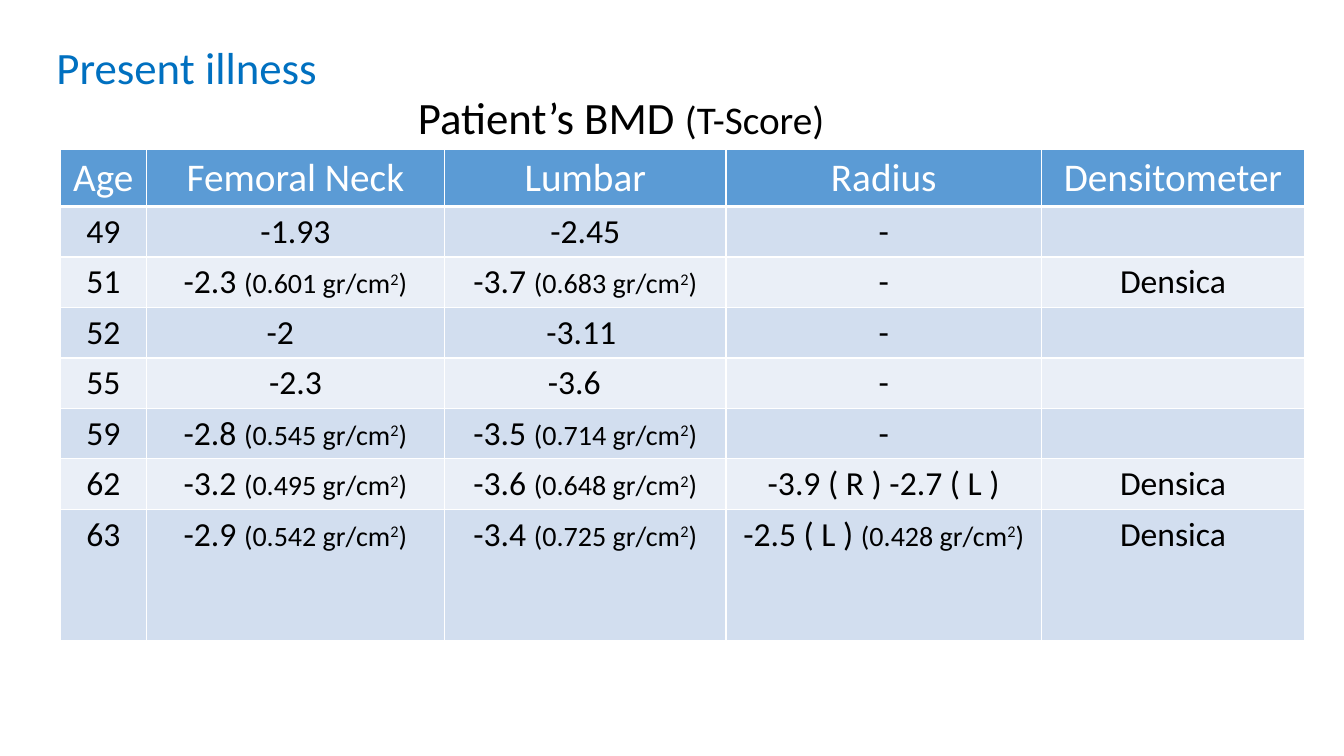
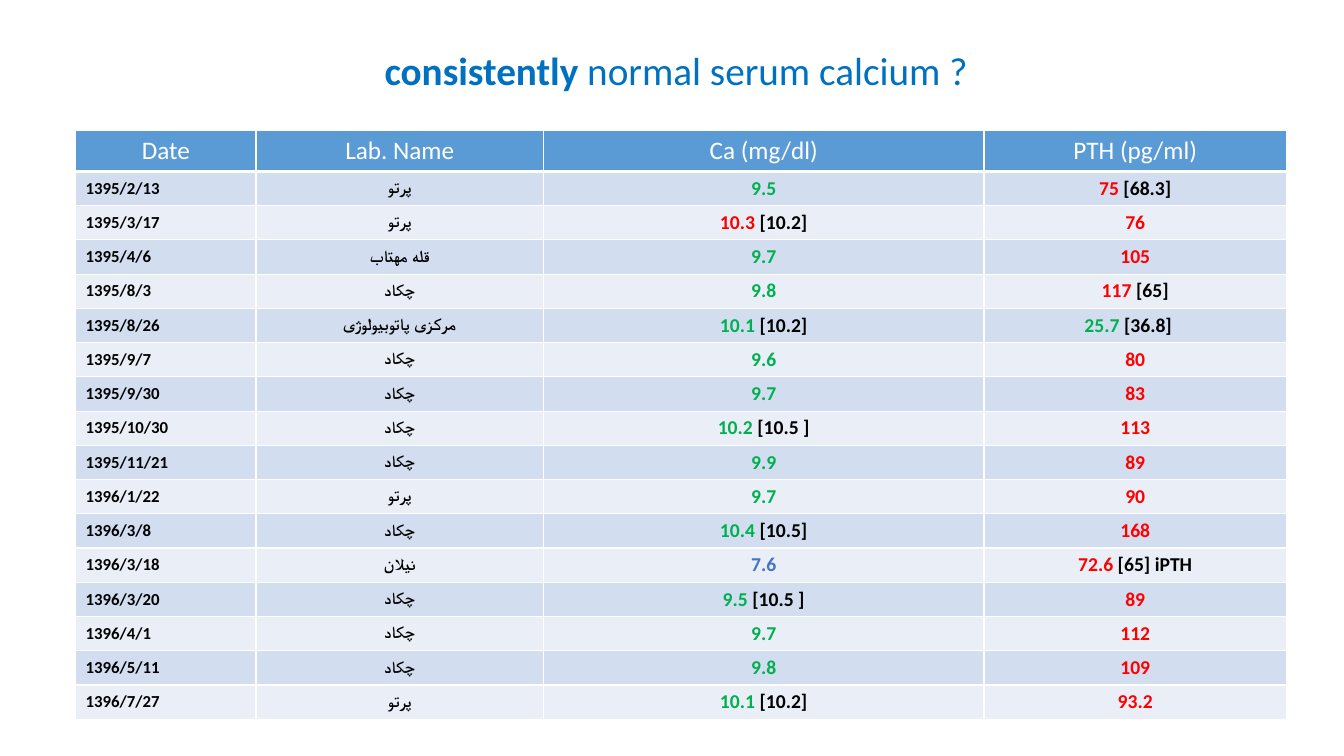
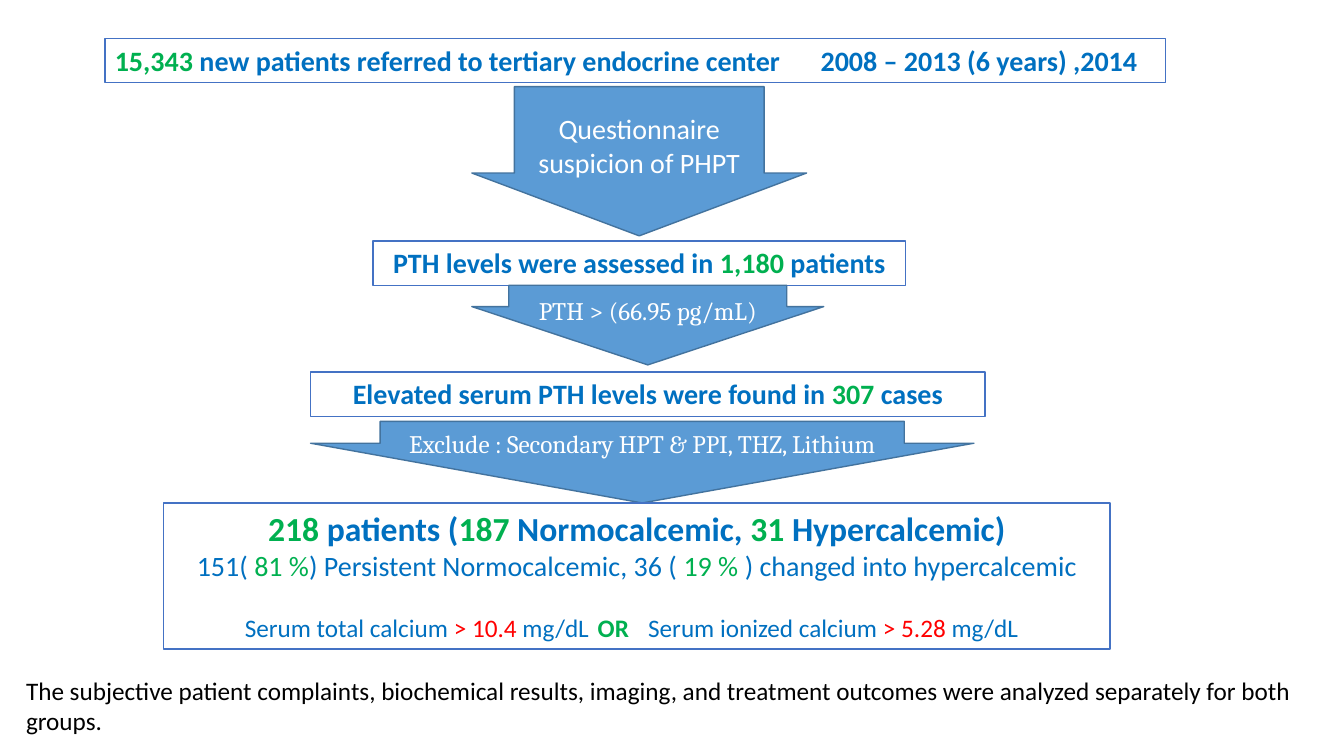
from lxml.etree import SubElement
from pptx import Presentation
from pptx.dml.color import RGBColor
from pptx.enum.shapes import MSO_SHAPE
from pptx.enum.text import MSO_ANCHOR, PP_ALIGN
from pptx.oxml.ns import qn
from pptx.util import Inches, Pt

HEX = {
    "white": "FFFFFF", "black": "000000", "title": "0070C0",
    "head": "5B9BD5", "odd": "D2DEEF", "even": "EAEFF7",
    "edge": "4472C4", "rim": "43739E",
    "green": "00B050", "red": "FF0000", "blue": "4472C4",
}
LEFT, MID = PP_ALIGN.LEFT, PP_ALIGN.CENTER
TITLE_ONLY, BLANK = 5, 6


def rgb(name):
    return RGBColor.from_string(HEX[name])


def green(text):
    return text, {"color": "green"}


def red(text):
    return text, {"color": "red"}


def bmd(score, density=None):
    """Runs for a T-score, with the bone density after it if known."""
    if density is None:
        return [score]
    small = {"size": 20}
    return [score + " ", (f"({density} gr/cm", small),
            ("2", {"size": 20, "base": 30}), (")", small)]


def lab(text):
    """Runs for a lab value: a colour letter, the value, then a black remark."""
    code = {"g": "green", "r": "red", "b": "blue"}[text[0]]
    value, gap, rest = text[1:].partition(" ")
    runs = [(value, {"size": 14, "color": code})]
    return runs + [(gap + rest, {"size": 14})] if rest else runs


def set_tabs(para, start, stops):
    """Indent a paragraph and give it left tab stops, in inches."""
    props = para._p.get_or_add_pPr()
    props.set("marL", str(Inches(start)))
    props.set("indent", "0")
    tabs = SubElement(props, qn("a:tabLst"))
    for stop in stops:
        SubElement(tabs, qn("a:tab"), pos=str(Inches(stop)), algn="l")


class Deck:
    base = {"name": "Calibri", "size": 18, "bold": False, "color": "black"}

    def __init__(self):
        self.prs = Presentation()
        self.prs.slide_width = Inches(13.33)
        self.prs.slide_height = Inches(7.5)

    def add(self, layout):
        self.slide = self.prs.slides.add_slide(self.prs.slide_layouts[layout])

    def put(self, frame, paras, align=MID, **style):
        """Set paragraphs of runs; a run is a text or (text, format)."""
        for i, runs in enumerate(paras):
            para = frame.add_paragraph() if i else frame.paragraphs[0]
            para.alignment = align
            for item in runs:
                text, extra = (item, {}) if isinstance(item, str) else item
                look = {**self.base, **style, **extra}
                run = para.add_run()
                run.text = text
                run.font.color.rgb = rgb(look.pop("color"))
                raised = look.pop("base", 0)
                if raised:
                    run._r.get_or_add_rPr().set("baseline", str(raised * 1000))
                look["size"] = Pt(look["size"])
                for key, value in look.items():
                    setattr(run.font, key, value)
        return frame

    def title(self, at, runs, align=LEFT, **style):
        shape = self.slide.shapes.title
        for key, value in zip(("left", "top", "width", "height"), at):
            setattr(shape, key, Inches(value))
        frame = shape.text_frame
        frame.word_wrap = False
        frame.vertical_anchor = MSO_ANCHOR.TOP
        self.put(frame, [runs], align, color="title", **style)

    def text(self, at, runs, align=LEFT, **style):
        frame = self.slide.shapes.add_textbox(*map(Inches, at)).text_frame
        frame.word_wrap = True
        self.put(frame, [runs], align, **style)

    def shape(self, kind, at, fill, line):
        shape = self.slide.shapes.add_shape(kind, *map(Inches, at))
        shape.shadow.inherit = False
        shape.fill.solid()
        shape.fill.fore_color.rgb = rgb(fill)
        shape.line.color.rgb = rgb(line)
        shape.line.width = Pt(1)
        shape.text_frame.word_wrap = True
        shape.text_frame.vertical_anchor = MSO_ANCHOR.TOP
        return shape

    def box(self, at, paras, align=MID):
        shape = self.shape(MSO_SHAPE.RECTANGLE, at, "white", "edge")
        return self.put(shape.text_frame, paras, align,
                        size=20, bold=True, color="title")

    def arrow(self, at, adjust, inset, paras, **style):
        shape = self.shape(MSO_SHAPE.DOWN_ARROW, at, "head", "rim")
        for i, value in enumerate(adjust):
            shape.adjustments[i] = value
        shape.text_frame.margin_top = Inches(inset)
        self.put(shape.text_frame, paras, color="white", **style)

    def cell(self, cell, runs, fill, edge, align, **style):
        cell.fill.solid()
        cell.fill.fore_color.rgb = rgb(fill)
        props = cell._tc.get_or_add_tcPr()
        for i, side in enumerate("LRTB"):
            width = edge if side == "B" else 1
            line = SubElement(props, qn("a:ln" + side), w=str(Pt(width)))
            paint = SubElement(line, qn("a:solidFill"))
            SubElement(paint, qn("a:srgbClr"), val=HEX["white"])
            props.insert(i, line)
        self.put(cell.text_frame, [runs], align, **style)

    def table(self, at, cols, highs, head, rows, top, body, first=MID,
              anchor=MSO_ANCHOR.TOP, pads=None):
        """Banded table; pads maps (row, column) to a right margin."""
        size = (sum(cols), sum(highs))
        grid = self.slide.shapes.add_table(
            len(highs), len(cols), *map(Inches, (*at, *size))).table
        for col, width in zip(grid.columns, cols):
            col.width = Inches(width)
        for row, high in zip(grid.rows, highs):
            row.height = Inches(high)
        for c, name in enumerate(head):
            self.cell(grid.cell(0, c), [name], "head", 3, MID,
                      color="white", **top)
        for r, row in enumerate(rows, 1):
            for c, runs in enumerate(row):
                cell = grid.cell(r, c)
                cell.vertical_anchor = anchor
                self.cell(cell, runs, "odd" if r % 2 else "even", 1,
                          MID if c else first, **body)
        for place, pad in (pads or {}).items():
            grid.cell(*place).margin_right = Inches(pad)


def density(deck):
    deck.add(TITLE_ONLY)
    deck.title((0.46, 0.34, 10.61, 0.64), ["Present illness"], size=32)
    deck.text((3.56, 0.84, 5.2, 0.64),
              ["Patient’s BMD ", ("(T-Score)", {"size": 28})], MID, size=32)
    scores = [
        ("49", ["-1.93"], ["-2.45"], ["-"], ""),
        ("51", ["-2.3", "0.601"], ["-3.7", "0.683"], ["-"], "Densica"),
        ("52", ["-2"], ["-3.11"], ["-"], ""),
        ("55", ["-2.3"], ["-3.6"], ["-"], ""),
        ("59", ["-2.8", "0.545"], ["-3.5", "0.714"], ["-"], ""),
        ("62", ["-3.2", "0.495"], ["-3.6", "0.648"],
         ["-3.9 ( R ) -2.7 ( L )"], "Densica"),
        ("63", ["-2.9", "0.542"], ["-3.4", "0.725"],
         ["-2.5 ( L )", "0.428"], "Densica"),
    ]
    rows = [([age], bmd(*neck), bmd(*lumbar), bmd(*radius),
             [meter] if meter else [])
            for age, neck, lumbar, radius, meter in scores]
    deck.table((0.6, 1.48), (0.85, 2.96, 2.79, 3.13, 2.61),
               [0.57] + [0.5] * 6 + [1.3],
               ("Age", "Femoral Neck", "Lumbar", "Radius", "Densitometer"),
               rows, {"size": 28}, {"size": 24},
               pads={(3, 1): 0.4, (3, 2): 0.18, (4, 2): 0.32})


def calcium(deck):
    deck.add(TITLE_ONLY)
    deck.title((3.68, 0.41, 6.05, 0.57),
               [("consistently", {"bold": True}), " normal serum calcium ?"],
               MID, size=28)
    tests = [
        ("1395/2/13", "پرتو", "g9.5", "r75 [68.3]"),
        ("1395/3/17", "پرتو", "r10.3 [10.2]", "r76"),
        ("1395/4/6", "قله مهتاب", "g9.7", "r105"),
        ("1395/8/3", "چکاد", "g9.8", "r117 [65]"),
        ("1395/8/26", "مرکزی پاتوبیولوژی", "g10.1 [10.2]", "g25.7 [36.8]"),
        ("1395/9/7", "چکاد", "g9.6", "r80"),
        ("1395/9/30", "چکاد", "g9.7", "r83"),
        ("1395/10/30", "چکاد", "g10.2 [10.5 ]", "r113"),
        ("1395/11/21", "چکاد", "g9.9", "r89"),
        ("1396/1/22", "پرتو", "g9.7", "r90"),
        ("1396/3/8", "چکاد", "g10.4 [10.5]", "r168"),
        ("1396/3/18", "نیلان", "b7.6", "r72.6 [65] iPTH"),
        ("1396/3/20", "چکاد", "g9.5 [10.5 ]", "r89"),
        ("1396/4/1", "چکاد", "g9.7", "r112"),
        ("1396/5/11", "چکاد", "g9.8", "r109"),
        ("1396/7/27", "پرتو", "g10.1 [10.2]", "r93.2"),
    ]
    rows = [([date], [name], lab(ca), lab(pth))
            for date, name, ca, pth in tests]
    deck.table((0.75, 1.29), (1.79, 2.85, 4.37, 3), [0.41] + [0.34] * 16,
               ("Date", "Lab. Name", "Ca (mg/dl)", "PTH (pg/ml)"), rows,
               {"size": 18}, {"size": 12, "bold": True}, LEFT,
               MSO_ANCHOR.MIDDLE, {(5, 3): 0.24})


def flow(deck):
    deck.add(BLANK)
    frame = deck.box((1.04, 0.38, 10.52, 0.44), [[
        green("15,343"),
        " new patients referred to tertiary endocrine center\t"
        "2008 – 2013 (6 years) ,2014"]], LEFT)
    set_tabs(frame.paragraphs[0], 0, [7.03])
    deck.arrow((4.68, 0.86, 3.32, 1.48), (0.746, 0.421), 0.25,
               [["Questionnaire"], ["suspicion of PHPT"]], size=20)
    deck.box((3.7, 2.39, 5.28, 0.44), [[
        "PTH levels were assessed in ", green("1,180"), " patients"]])
    deck.arrow((4.68, 2.83, 3.49, 0.79), (0.79, 0.732), 0.1,
               [["PTH > (66.95 pg/mL)"]], name="Cambria")
    deck.box((3.08, 3.69, 6.69, 0.44), [[
        "Elevated serum PTH levels were found in ", green("307 "), "cases"]])
    deck.arrow((3.08, 4.18, 6.58, 0.81), (0.79, 0.732), 0.07,
               [["Exclude : Secondary HPT & PPI, THZ, Lithium"]],
               name="Cambria")

    counts = [green("218 "), "patients (", green("187"), " Normocalcemic, ",
              green("31"), " Hypercalcemic)"]
    shares = ["151( ", green("81 %"), ") Persistent Normocalcemic, 36 ( ",
              green("19 % "), ") changed into hypercalcemic"]
    limits = ["Serum total calcium ", red("> 10.4 "), "mg/dL\t",
              ("OR", {"color": "green", "bold": True}),
              "\tSerum ionized calcium ", red("> 5.28 "), "mg/dL"]
    frame = deck.box((1.62, 4.99, 9.39, 1.45), [counts, shares, limits])
    sizes = ((24, True), (20, False), (18, False))
    for para, (size, bold) in zip(frame.paragraphs, sizes):
        for run in para.runs:
            run.font.size = Pt(size)
            run.font.bold = bold or run.text == "OR"
    last = frame.paragraphs[-1]
    last.alignment = LEFT
    last.space_before = Pt(22)
    set_tabs(last, 0.71, [4.29, 4.82])
    deck.text((0.16, 6.65, 13.17, 0.71), [
        "The subjective patient complaints, biochemical results, imaging, "
        "and treatment outcomes were analyzed separately for both groups."])


def main():
    deck = Deck()
    for build in (density, calcium, flow):
        build(deck)
    deck.prs.save("out.pptx")


if __name__ == "__main__":
    main()
